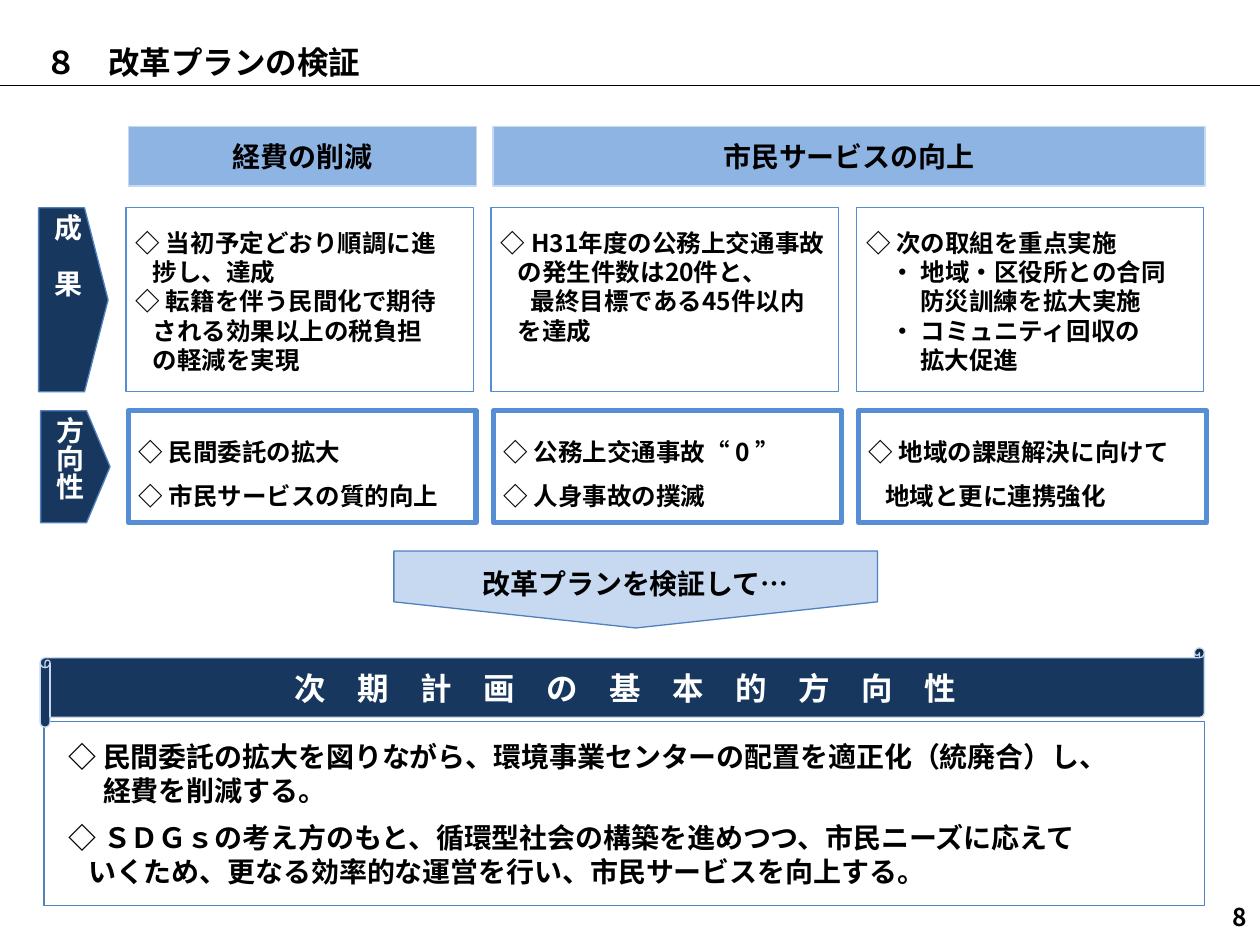
from dataclasses import dataclass

from lxml.etree import SubElement
from pptx import Presentation
from pptx.dml.color import RGBColor
from pptx.enum.shapes import MSO_CONNECTOR, MSO_SHAPE
from pptx.enum.text import MSO_ANCHOR, PP_ALIGN
from pptx.oxml.ns import qn
from pptx.util import Cm, Pt


@dataclass(frozen=True)
class Theme:
    font: str = "Noto Sans CJK JP"
    black: str = "000000"
    white: str = "FFFFFF"
    navy: str = "17375E"
    blue: str = "558ED5"
    edge: str = "4F81BD"
    header: str = "8EB4E3"
    pale: str = "C6D9F1"
    title_size: int = 18
    head_size: int = 16
    body_size: int = 14
    thin: float = 0.75
    thick: float = 3


@dataclass(frozen=True)
class Line:
    """One line of text with its left indent and the space above it, in points."""
    text: str
    indent: float = 0
    before: float = 0


class SlideBuilder:
    def __init__(self, page, theme):
        self.page = page
        self.theme = theme

    def set_text(self, box, lines, size, color=None, align=PP_ALIGN.LEFT,
                 insets=(0.25, 0.13, 0.25, 0.13), anchor=MSO_ANCHOR.MIDDLE,
                 spacing=1.0, direction=None):
        """Fill a shape with text; insets run left, top, right, bottom in cm."""
        frame = box.text_frame
        left, top, right, bottom = map(Cm, insets)
        frame_format = {
            "word_wrap": True, "vertical_anchor": anchor,
            "margin_left": left, "margin_top": top,
            "margin_right": right, "margin_bottom": bottom,
        }
        for name, value in frame_format.items():
            setattr(frame, name, value)
        if direction:
            frame._txBody.bodyPr.set("vert", direction)
        for index, line in enumerate(lines):
            para = frame.paragraphs[0] if index == 0 else frame.add_paragraph()
            para_format = {"alignment": align, "line_spacing": spacing,
                           "space_before": Pt(line.before), "space_after": Pt(0)}
            for name, value in para_format.items():
                setattr(para, name, value)
            properties = para._p.get_or_add_pPr()
            properties.set("marL", str(Pt(line.indent)))
            properties.set("indent", "0")
            span = para.add_run()
            span.text = line.text
            font_format = {"name": self.theme.font, "size": Pt(size), "bold": True}
            for name, value in font_format.items():
                setattr(span.font, name, value)
            span.font.color.rgb = RGBColor.from_string(color or self.theme.black)
            SubElement(span._r.get_or_add_rPr(), qn("a:ea"), typeface=self.theme.font)

    def title(self, line, left, top, width, height):
        box = self.page.shapes.title
        place = {"left": left, "top": top, "width": width, "height": height}
        for name, value in place.items():
            setattr(box, name, Cm(value))
        self.set_text(box, [line], self.theme.title_size, insets=(0.25, 0.74, 0.25, 0))

    def rule(self, left, top, right):
        line = self.page.shapes.add_connector(
            MSO_CONNECTOR.STRAIGHT, Cm(left), Cm(top), Cm(right), Cm(top))
        line.line.color.rgb = RGBColor.from_string(self.theme.black)
        line.line.width = Pt(self.theme.thin)
        SubElement(line._element.spPr, qn("a:effectLst"))

    def label(self, text, place, size, align):
        box = self.page.shapes.add_textbox(*map(Cm, place))
        self.set_text(box, [Line(text)], size, align=align)

    def shape(self, kind, place, fill, edge, weight=None):
        box = self.page.shapes.add_shape(kind, *map(Cm, place))
        box.shadow.inherit = False
        if fill:
            box.fill.solid()
            box.fill.fore_color.rgb = RGBColor.from_string(fill)
        else:
            box.fill.background()
        box.line.color.rgb = RGBColor.from_string(edge)
        box.line.width = Pt(weight or self.theme.thin)
        return box

    def panel(self, place, lines, size, fill=None, edge=None, weight=None, **style):
        box = self.shape(MSO_SHAPE.RECTANGLE, place, fill, edge or self.theme.blue, weight)
        self.set_text(box, lines, size, **style)

    def banner(self, kind, place, text, size, fill, color=None):
        box = self.shape(kind, place, fill, self.theme.pale)
        self.set_text(box, [Line(text)], size, color, PP_ALIGN.CENTER)

    def arrow(self, place, text, fill, color, direction, rotation=0, **style):
        box = self.shape(MSO_SHAPE.PENTAGON, place, fill, self.theme.edge)
        box.adjustments[0] = 0.34
        box.rotation = rotation
        self.set_text(box, [Line(text)], self.theme.head_size, color,
                      PP_ALIGN.CENTER, direction=direction, **style)


RESULTS = [
    [Line("◇ 当初予定どおり順調に進"), Line("捗し、達成", 9.5),
     Line("◇ 転籍を伴う民間化で期待"), Line("される効果以上の税負担", 9.5),
     Line("の軽減を実現", 9.5)],
    [Line("◇ H31年度の公務上交通事故"), Line("の発生件数は20件と、", 9.5),
     Line("最終目標である45件以内", 17), Line("を達成", 9.5)],
    [Line("◇ 次の取組を重点実施"), Line("・ 地域・区役所との合同", 14),
     Line("防災訓練を拡大実施", 31), Line("・ コミュニティ回収の", 14),
     Line("拡大促進", 31)],
]
DIRECTIONS = [
    [Line("◇ 民間委託の拡大"), Line("◇ 市民サービスの質的向上")],
    [Line("◇ 公務上交通事故“ 0 ”"), Line("◇ 人身事故の撲滅")],
    [Line("◇ 地域の課題解決に向けて"), Line("地域と更に連携強化", 9.5)],
]
BASIC_POLICY = [
    Line("◇ 民間委託の拡大を図りながら、環境事業センターの配置を適正化（統廃合）し、"),
    Line("経費を削減する。", 19.5),
    Line("◇ ＳＤＧｓの考え方のもと、循環型社会の構築を進めつつ、市民ニーズに応えて", 0, 8),
    Line("いくため、更なる効率的な運営を行い、市民サービスを向上する。", 11),
]
COLUMN_WIDTH, COLUMN_PITCH = 7.01, 7.36
RESULT_TOP, RESULT_HEIGHT = 4.19, 3.71
DIRECTION_TOP, DIRECTION_HEIGHT = 8.28, 2.26


def main():
    deck = Presentation()
    deck.slide_width, deck.slide_height = Cm(25.4), Cm(19.05)
    theme = Theme()
    slide = SlideBuilder(deck.slides.add_slide(deck.slide_layouts[5]), theme)

    slide.rule(0, 1.73, 25.4)
    slide.title(Line("８　改革プランの検証", theme.title_size), 0.03, 0, 25.37, 1.75)
    slide.label("8", (24.08, 17.98, 1.3, 0.99), theme.body_size, PP_ALIGN.RIGHT)

    for left, width, text in ((2.59, COLUMN_WIDTH, "経費の削減"),
                              (9.94, 14.35, "市民サービスの向上")):
        slide.banner(MSO_SHAPE.FLOWCHART_PROCESS, (left, 2.55, width, 1.2),
                     text, theme.head_size, theme.header)

    for column, (results, directions) in enumerate(zip(RESULTS, DIRECTIONS)):
        offset = column * COLUMN_PITCH
        slide.panel((2.54 + offset, RESULT_TOP, COLUMN_WIDTH, RESULT_HEIGHT),
                    results, theme.body_size, anchor=MSO_ANCHOR.TOP,
                    insets=(0.2, 0.4, 0.2, 0.1))
        slide.panel((2.59 + offset, DIRECTION_TOP, COLUMN_WIDTH, DIRECTION_HEIGHT),
                    directions, theme.body_size, theme.white, weight=theme.thick,
                    insets=(0.2, 0.1, 0.2, 0.1), spacing=1.5)

    slide.arrow((0.78, RESULT_TOP, 1.4, RESULT_HEIGHT), "成　果", theme.navy,
                theme.white, "eaVert", insets=(0.25, 0.13, 0.25, 1.65))
    slide.arrow((0.82, DIRECTION_TOP, 1.4, DIRECTION_HEIGHT), "方向性", theme.navy,
                theme.white, "eaVert")
    slide.arrow((12.04, 7.01, 1.55, 9.75), "改革プランを検証して…", theme.pale,
                theme.black, "vert270", rotation=90)

    slide.panel((0.89, 14.55, 23.39, 3.71), BASIC_POLICY, theme.head_size,
                theme.white, theme.edge, insets=(0.5, 0.1, 0.5, 0.1))
    slide.banner(MSO_SHAPE.HORIZONTAL_SCROLL, (0.81, 13.06, 23.47, 1.6),
                 "次　期　計　画　の　基　本　的　方　向　性",
                 theme.title_size, theme.navy, theme.white)
    deck.save("out.pptx")


if __name__ == "__main__":
    main()
